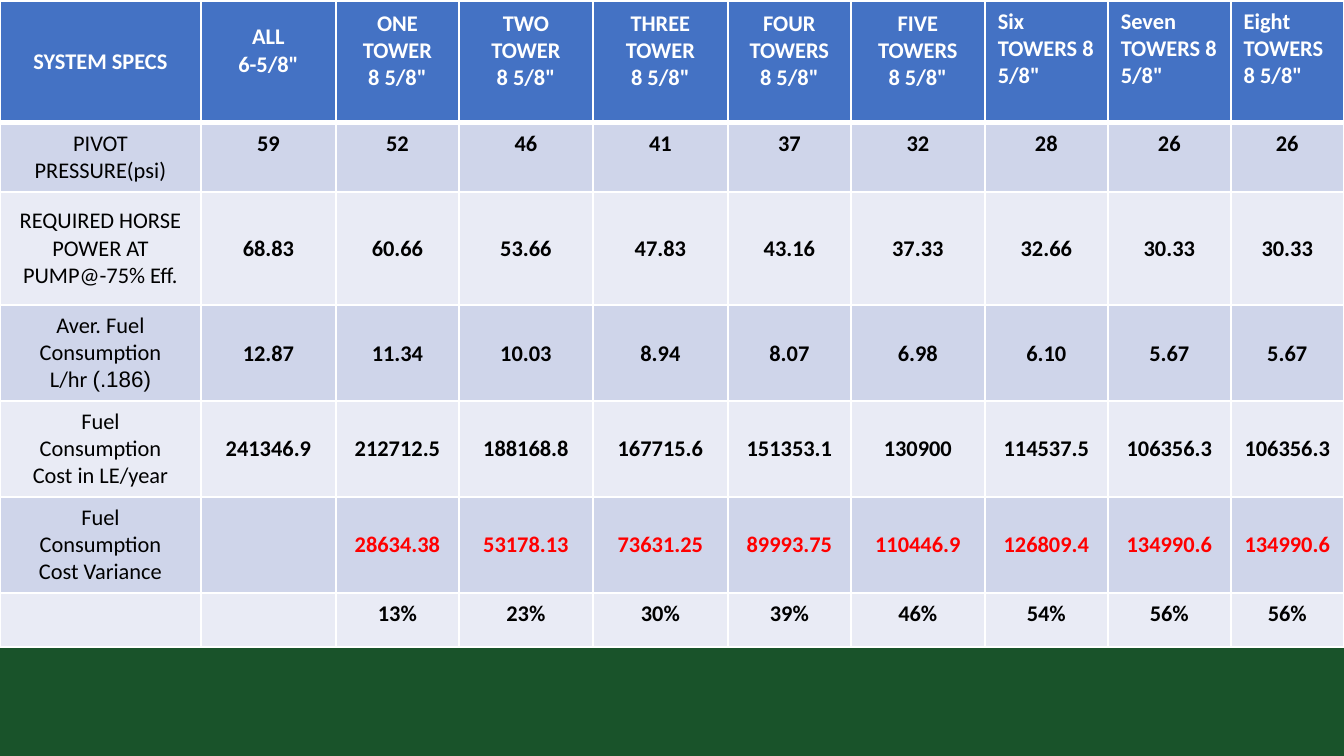
"""Build the pivot tower pipe-size comparison table slide."""
from lxml import etree
from pptx import Presentation
from pptx.dml.color import RGBColor
from pptx.enum.shapes import MSO_SHAPE
from pptx.enum.text import MSO_ANCHOR, PP_ALIGN
from pptx.oxml.ns import qn
from pptx.util import Pt

SCALE = 914400 / 134.4
RECTANGLE = MSO_SHAPE.RECTANGLE
TOP, MIDDLE = MSO_ANCHOR.TOP, MSO_ANCHOR.MIDDLE
LEFT, CENTER = PP_ALIGN.LEFT, PP_ALIGN.CENTER

WHITE = RGBColor(0xFF, 0xFF, 0xFF)
BLACK = RGBColor(0x00, 0x00, 0x00)
RED = RGBColor(0xFF, 0x00, 0x00)
BLUE = RGBColor(0x44, 0x72, 0xC4)
BANDS = [RGBColor(0xE9, 0xEB, 0xF5), RGBColor(0xCF, 0xD5, 0xEA)]
DARK_GREEN = RGBColor(0x19, 0x53, 0x2A)
PALE_GREEN = RGBColor(0xA3, 0xBC, 0x92)

COLUMN_WIDTHS = [201, 135, 123, 134, 135, 123, 134, 123, 123, 113]
ROW_HEIGHTS = [122, 69, 113, 95, 96, 96, 54]
VARIANCE_ROW = 5
TOP_ROWS = (1, 6)

ROWS = [
    ["SYSTEM SPECS", 'ALL\n6-5/8"', 'ONE TOWER\n8 5/8"', 'TWO TOWER\n8 5/8"',
     'THREE TOWER\n8 5/8"', 'FOUR TOWERS\n8 5/8"', 'FIVE TOWERS\n8 5/8"',
     'Six\nTOWERS 8 5/8"', 'Seven\nTOWERS 8 5/8"', 'Eight\nTOWERS\n8 5/8"'],
    ["PIVOT PRESSURE(psi)", "59", "52", "46", "41", "37", "32", "28", "26", "26"],
    ["REQUIRED HORSE POWER AT PUMP@-75% Eff.", "68.83", "60.66", "53.66", "47.83",
     "43.16", "37.33", "32.66", "30.33", "30.33"],
    ["Aver. Fuel Consumption L/hr ", "12.87", "11.34", "10.03", "8.94",
     "8.07", "6.98", "6.10", "5.67", "5.67"],
    ["Fuel Consumption Cost in LE/year", "241346.9", "212712.5", "188168.8", "167715.6",
     "151353.1", "130900", "114537.5", "106356.3", "106356.3"],
    ["Fuel Consumption Cost Variance", "", "28634.38", "53178.13", "73631.25",
     "89993.75", "110446.9", "126809.4", "134990.6", "134990.6"],
    ["", "", "13%", "23%", "30%", "39%", "46%", "54%", "56%", "56%"],
]

LABEL = {"vertical_anchor": MIDDLE, "margin_left": 19, "margin_top": 7,
         "margin_right": 19, "margin_bottom": 7}
RAISED = {**LABEL, "margin_bottom": 29}
PLAIN = {"vertical_anchor": TOP, "margin_left": 13, "margin_top": 7,
         "margin_right": 13, "margin_bottom": 7}
NUMBER = {"vertical_anchor": MIDDLE, "margin_left": 1, "margin_top": 1,
          "margin_right": 1, "margin_bottom": 0}


def px(length):
    return round(length * SCALE)


def add_border(cell, side, points):
    properties = cell._tc.get_or_add_tcPr()
    line = etree.SubElement(properties, qn("a:" + side), w=str(Pt(points)))
    fill = etree.SubElement(line, qn("a:solidFill"))
    etree.SubElement(fill, qn("a:srgbClr"), val=str(WHITE))


presentation = Presentation()
presentation.slide_width = px(1344)
presentation.slide_height = px(756)
slide = presentation.slides.add_slide(presentation.slide_layouts[6])
slide.background.fill.solid()
slide.background.fill.fore_color.rgb = PALE_GREEN

footer = slide.shapes.add_shape(RECTANGLE, 0, px(642), px(1344), px(114))
footer.shadow.inherit = False
footer.fill.solid()
footer.fill.fore_color.rgb = DARK_GREEN
footer.line.fill.background()

table = slide.shapes.add_table(len(ROWS), len(COLUMN_WIDTHS), 0, px(1),
                               px(sum(COLUMN_WIDTHS)), px(sum(ROW_HEIGHTS))).table
table.horz_banding = False
for column, width in zip(table.columns, COLUMN_WIDTHS):
    column.width = px(width)
for row, height in zip(table.rows, ROW_HEIGHTS):
    row.height = px(height)

for row_index, texts in enumerate(ROWS):
    header = row_index == 0
    for column_index, text in enumerate(texts):
        cell = table.cell(row_index, column_index)
        label = column_index == 0
        left_header = header and column_index > 6

        for side in ("lnL", "lnR", "lnT", "lnB"):
            thick = (row_index, side) in ((0, "lnB"), (1, "lnT"))
            add_border(cell, side, 3 if thick else 1)
        cell.fill.solid()
        cell.fill.fore_color.rgb = BLUE if header else BANDS[row_index % 2]

        if not text:
            layout = NUMBER
        elif label:
            layout = LABEL
        elif left_header or row_index in TOP_ROWS:
            layout = PLAIN
        else:
            layout = RAISED if header else NUMBER
        for name, value in layout.items():
            setattr(cell, name, px(value) if name.startswith("margin") else value)
        if not text:
            continue

        cell.text = text
        if text.startswith("Aver."):
            cell.text_frame.paragraphs[0].add_run().text = "(.186)"
        if header:
            color = WHITE
        else:
            color = RED if row_index == VARIANCE_ROW and not label else BLACK
        for paragraph in cell.text_frame.paragraphs:
            paragraph.alignment = LEFT if left_header else CENTER
            for run in paragraph.runs:
                font = {"name": "Arial" if run.text == "(.186)" else "Calibri",
                        "size": Pt(12), "bold": header or not label}
                for name, value in font.items():
                    setattr(run.font, name, value)
                run.font.color.rgb = color

presentation.save("out.pptx")
